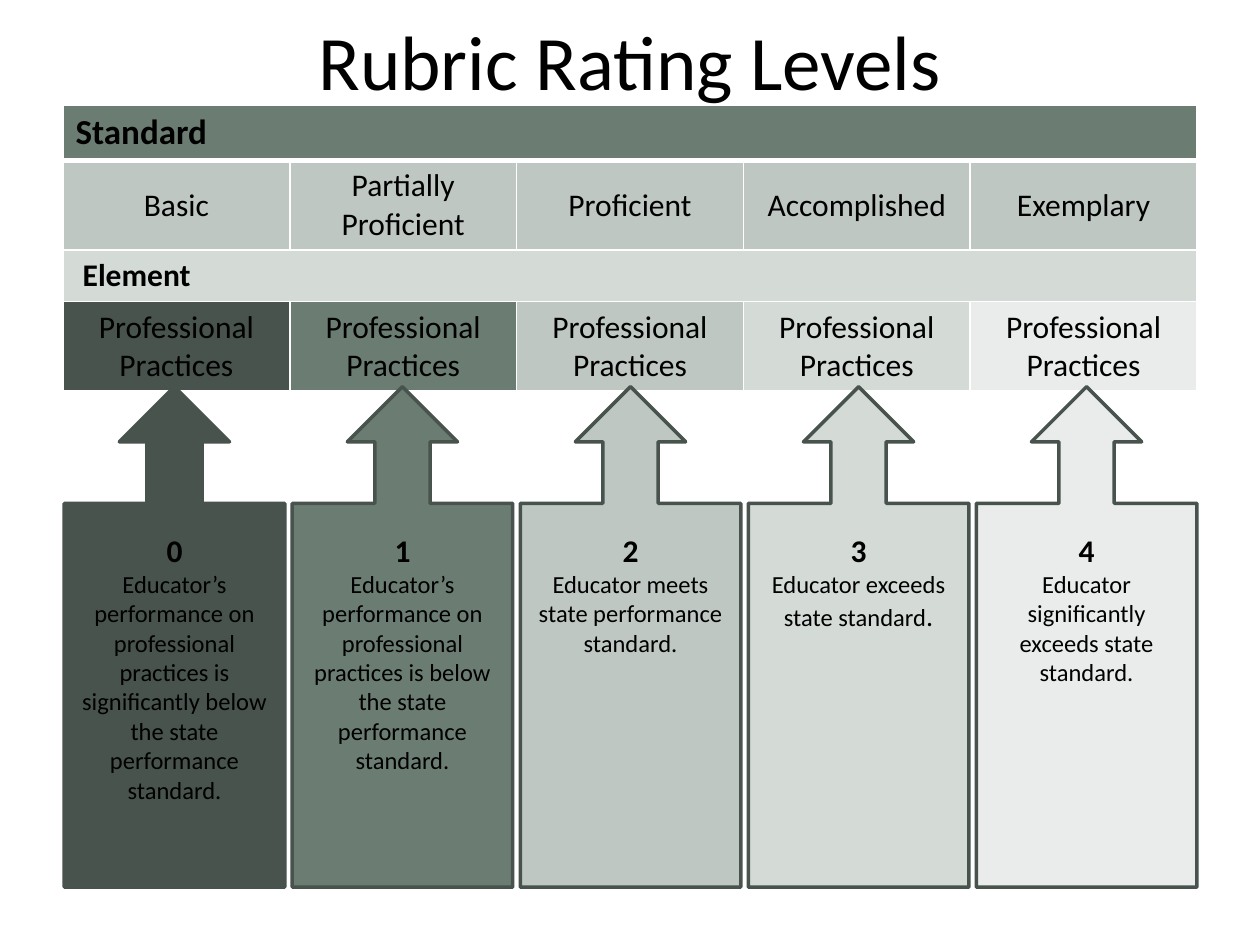
from lxml import etree
from pptx import Presentation
from pptx.dml.color import RGBColor
from pptx.enum.shapes import MSO_SHAPE
from pptx.enum.text import MSO_ANCHOR, PP_ALIGN
from pptx.oxml.ns import qn
from pptx.util import Pt

CENTER, LEFT = PP_ALIGN.CENTER, PP_ALIGN.LEFT
TOP, MIDDLE = MSO_ANCHOR.TOP, MSO_ANCHOR.MIDDLE
CALLOUT = MSO_SHAPE.UP_ARROW_CALLOUT

FONT = "Calibri"
BLACK, WHITE, OUTLINE = "000000", "FFFFFF", "47534C"
STANDARD_FILL, LEVEL_FILL, ELEMENT_FILL = "6B7D72", "BEC7C2", "D4DAD6"

TITLE = "Rubric Rating Levels"
STANDARD, ELEMENT, PRACTICES = "Standard", " Element", "Professional Practices"
LEVELS = [
    ("Basic", "47534C", [("Educator’s performance on professional practices is "
                          "significantly below the state performance standard.", 14)]),
    ("Partially Proficient", "6B7D72", [("Educator’s performance on professional practices is "
                                         "below the state performance standard.", 14)]),
    ("Proficient", "BEC7C2", [("Educator meets state performance standard.", 14)]),
    ("Accomplished", "D4DAD6", [("Educator exceeds state standard", 14), (".", 16)]),
    ("Exemplary", "E9ECEB", [("Educator significantly exceeds state standard.", 14)]),
]

TABLE_LEFT, TABLE_TOP, TABLE_WIDTH = 36, 60, 648
ROW_HEIGHTS = [31, 50.5, 29.5, 50.5]
CALLOUT_LEFT, CALLOUT_TOP, CALLOUT_PITCH = 36.7, 221, 130.3
CALLOUT_WIDTH, CALLOUT_HEIGHT = 126, 286
CALLOUT_ADJUSTMENTS = [0.25, 0.25, 0.25, 0.767]


def color(hex_code):
    return RGBColor.from_string(hex_code)


def paint(part, hex_code):
    part.fill.solid()
    part.fill.fore_color.rgb = color(hex_code)


def style(paragraph, size=None, bold=False, align=CENTER):
    paragraph.alignment = align
    font = paragraph.font
    font.name, font.bold = FONT, bold
    font.color.rgb = color(BLACK)
    if size:
        font.size = Pt(size)


def add_borders(cell, bottom_width):
    properties = cell._tc.get_or_add_tcPr()
    for side, width in (("lnL", 1), ("lnR", 1), ("lnT", 1), ("lnB", bottom_width)):
        line = etree.SubElement(properties, qn("a:" + side), w=str(Pt(width)))
        fill = etree.SubElement(line, qn("a:solidFill"))
        etree.SubElement(fill, qn("a:srgbClr"), val=WHITE)


def fill_cell(cell, text, fill, size=18, bold=False, align=CENTER, anchor=MIDDLE):
    cell.text = text
    cell.vertical_anchor = anchor
    style(cell.text_frame.paragraphs[0], size, bold, align)
    paint(cell, fill)


def add_rubric(slide):
    table = slide.shapes.add_table(
        len(ROW_HEIGHTS), len(LEVELS), Pt(TABLE_LEFT), Pt(TABLE_TOP),
        Pt(TABLE_WIDTH), Pt(sum(ROW_HEIGHTS))).table
    table.first_row = table.horz_banding = False
    for index, height in enumerate(ROW_HEIGHTS):
        table.rows[index].height = Pt(height)
        for cell in table.rows[index].cells:
            add_borders(cell, 1 if index else 3)
    for row, text, fill, size in ((0, STANDARD, STANDARD_FILL, 20),
                                  (2, ELEMENT, ELEMENT_FILL, 18)):
        table.cell(row, 0).merge(table.cell(row, len(LEVELS) - 1))
        fill_cell(table.cell(row, 0), text, fill, size, True, LEFT, TOP)
    for column, (level, fill, _) in enumerate(LEVELS):
        fill_cell(table.cell(1, column), level, LEVEL_FILL)
        fill_cell(table.cell(3, column), PRACTICES, fill)


def add_callout(slide, rating, fill, description):
    callout = slide.shapes.add_shape(
        CALLOUT, Pt(CALLOUT_LEFT + rating * CALLOUT_PITCH), Pt(CALLOUT_TOP),
        Pt(CALLOUT_WIDTH), Pt(CALLOUT_HEIGHT))
    for index, value in enumerate(CALLOUT_ADJUSTMENTS):
        callout.adjustments[index] = value
    callout.shadow.inherit = False
    paint(callout, fill)
    callout.line.color.rgb = color(OUTLINE)
    callout.line.width = Pt(2)
    frame = callout.text_frame
    frame.word_wrap = True
    frame.vertical_anchor = TOP
    frame.margin_top = Pt(15.8)
    number = frame.paragraphs[0]
    number.text = str(rating)
    style(number, 18, True)
    detail = frame.add_paragraph()
    style(detail)
    for text, size in description:
        run = detail.add_run()
        run.text = text
        run.font.size = Pt(size)


def main():
    deck = Presentation()
    deck.slide_width, deck.slide_height = Pt(720), Pt(540)
    slide = deck.slides.add_slide(deck.slide_layouts[5])
    title = slide.shapes.title
    title.left, title.top, title.width, title.height = Pt(36), Pt(0), Pt(648), Pt(68.4)
    title.text = TITLE
    title.text_frame.vertical_anchor = MIDDLE
    style(title.text_frame.paragraphs[0], 44)
    add_rubric(slide)
    for rating, (_, fill, description) in enumerate(LEVELS):
        add_callout(slide, rating, fill, description)
    deck.save("out.pptx")


if __name__ == "__main__":
    main()
